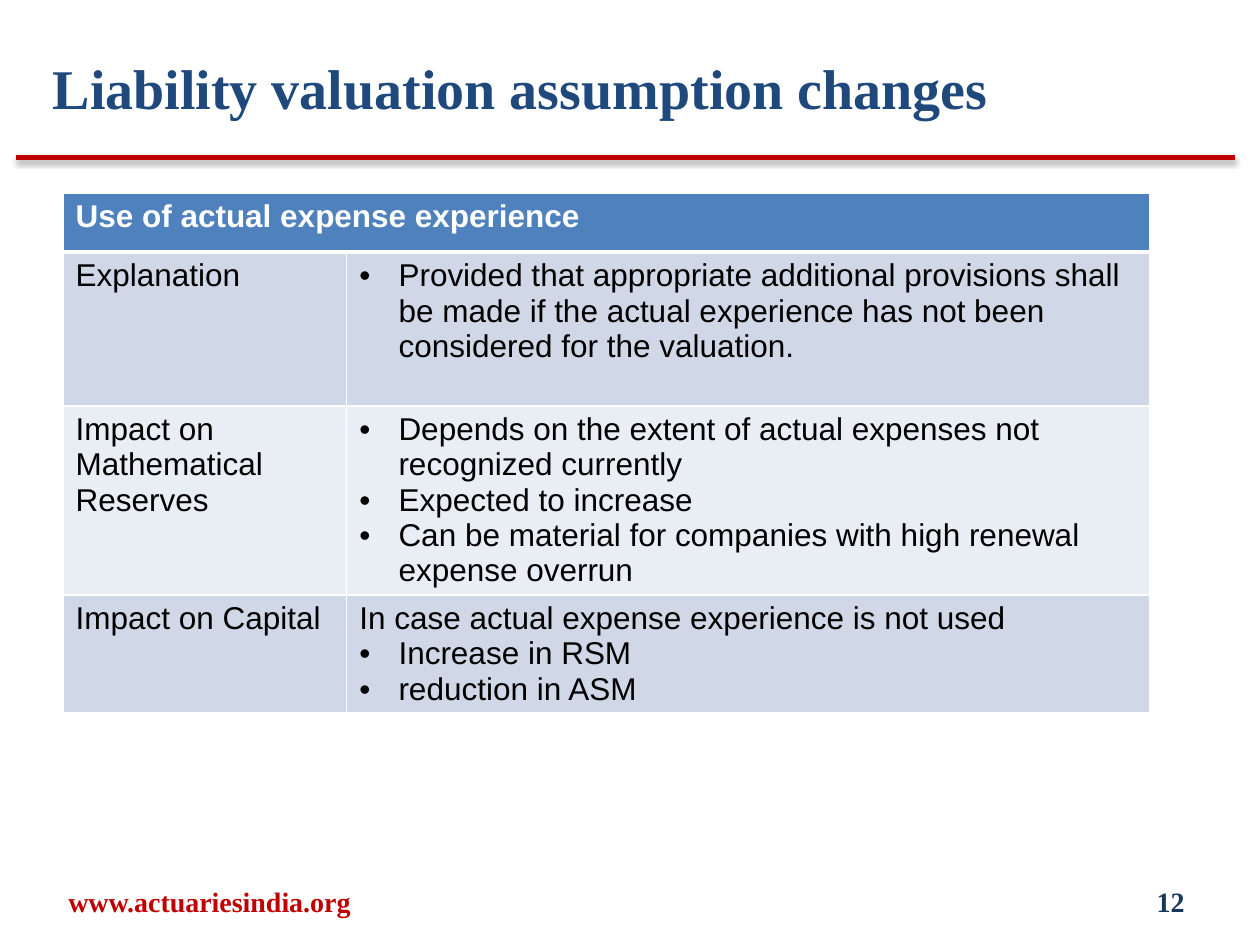
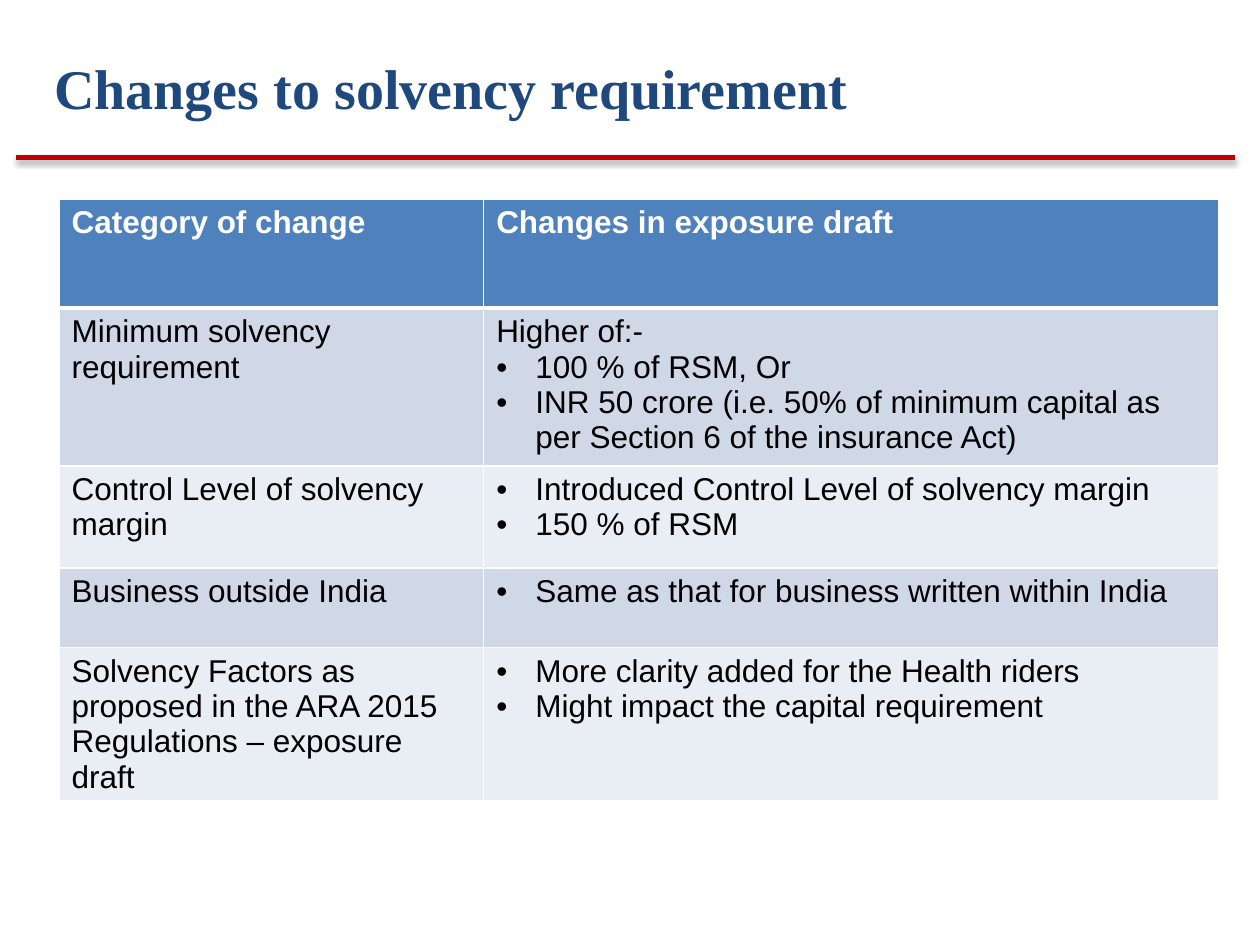
from lxml.etree import SubElement
from pptx import Presentation
from pptx.dml.color import RGBColor
from pptx.enum.text import MSO_ANCHOR, MSO_AUTO_SIZE, PP_ALIGN
from pptx.oxml import parse_xml
from pptx.oxml.ns import nsdecls, qn
from pptx.util import Cm, Pt

SERIF, SANS = "Times New Roman", "Arial"
NAVY, DEEP, RED = "1F497D", "17375E", "C00000"
WHITE, BLACK = "FFFFFF", "000000"
HEAD, BANDS = "4F81BD", ("E9EDF4", "D0D8E8")
HANG = Cm(0.79)


def rgb(value):
    return RGBColor.from_string(value)


def write(p, text, font=SANS, size=18, color=BLACK, bold=False, align=PP_ALIGN.LEFT, bullet=False):
    p.alignment = align
    if bullet:
        pPr = p._p.get_or_add_pPr()
        pPr.set("marL", str(HANG))
        pPr.set("indent", str(-HANG))
        SubElement(pPr, qn("a:buFont"), typeface=SANS)
        SubElement(pPr, qn("a:buChar"), char="•")
    r = p.add_run()
    r.text = text
    r.font.name, r.font.size, r.font.bold = font, Pt(size), bold
    r.font.color.rgb = rgb(color)


def add_rule(s, left, top, width):
    line = s.shapes.add_connector(1, Cm(left), Cm(top), Cm(left + width), Cm(top))
    line.line.color.rgb = rgb(RED)
    line.line.width = Pt(3)
    line._element.spPr.append(parse_xml(
        f'<a:effectLst {nsdecls("a")}>'
        f'<a:outerShdw blurRad="{Pt(3.1)}" dist="{Pt(1.6)}" dir="5400000" rotWithShape="0">'
        f'<a:srgbClr val="{BLACK}"><a:alpha val="38000"/></a:srgbClr>'
        '</a:outerShdw></a:effectLst>'))


def add_title(s, text, left, top, width, height):
    sp = s.shapes.title
    sp.left, sp.top, sp.width, sp.height = Cm(left), Cm(top), Cm(width), Cm(height)
    tf = sp.text_frame
    tf.word_wrap = True
    tf.auto_size = MSO_AUTO_SIZE.NONE
    tf.vertical_anchor = MSO_ANCHOR.TOP
    write(tf.paragraphs[0], text, font=SERIF, size=32, color=NAVY, bold=True)


def add_footer_text(s, text, left, width, color, align):
    tf = s.shapes.add_textbox(Cm(left), Cm(17.65), Cm(width), Cm(1.02)).text_frame
    tf.word_wrap = True
    tf.vertical_anchor = MSO_ANCHOR.MIDDLE
    write(tf.paragraphs[0], text, font=SERIF, size=16, color=color, bold=True, align=align)


def add_footer(s, site, number):
    add_footer_text(s, site, 0.2, 8.05, RED, PP_ALIGN.CENTER)
    add_footer_text(s, number, 18.21, 5.92, DEEP, PP_ALIGN.RIGHT)


def set_borders(cell, top=1, bottom=1):
    tcPr = cell._tc.get_or_add_tcPr()
    for i, (side, width) in enumerate((("L", 1), ("R", 1), ("T", top), ("B", bottom))):
        tcPr.insert(i, parse_xml(
            f'<a:ln{side} {nsdecls("a")} w="{Pt(width)}"><a:solidFill>'
            f'<a:srgbClr val="{WHITE}"/></a:solidFill></a:ln{side}>'))


def fill_cell(cell, content, row):
    head = row == 0
    cell.fill.solid()
    cell.fill.fore_color.rgb = rgb(HEAD if head else BANDS[row % 2])
    set_borders(cell, top=3 if row == 1 else 1, bottom=3 if head else 1)
    tf = cell.text_frame
    for i, line in enumerate(content.split("\n") if content else []):
        p = tf.add_paragraph() if i else tf.paragraphs[0]
        write(p, line.removeprefix("• "), color=WHITE if head else BLACK,
              bold=head, bullet=line.startswith("• "))


def add_grid(s, rows, left, top, widths, heights):
    tbl = s.shapes.add_table(len(rows), len(widths), Cm(left), Cm(top),
                             Cm(sum(widths)), Cm(sum(heights))).table
    for col, width in zip(tbl.columns, widths):
        col.width = Cm(width)
    for r, (row, height) in enumerate(zip(rows, heights)):
        tbl.rows[r].height = Cm(height)
        for c, content in enumerate(row):
            fill_cell(tbl.cell(r, c), content, r)
    if not rows[0][-1]:
        tbl.cell(0, 0).merge(tbl.cell(0, len(widths) - 1))


def add_table_slide(prs, title, title_box, rows, **grid):
    s = prs.slides.add_slide(prs.slide_layouts[5])
    add_rule(s, 0.33, 3.18, 24.56)
    add_title(s, title, *title_box)
    add_grid(s, rows, **grid)
    return s


EXPENSE_ROWS = [
    ("Use of actual expense experience", ""),
    ("Explanation",
     "• Provided that appropriate additional provisions shall be made if the actual "
     "experience has not been considered for the valuation."),
    ("Impact on Mathematical Reserves",
     "• Depends on the extent of actual expenses not recognized currently\n"
     "• Expected to increase\n"
     "• Can be material for companies with high renewal expense overrun"),
    ("Impact on Capital",
     "In case actual expense experience is not used\n• Increase in RSM\n• reduction in ASM"),
]

SOLVENCY_ROWS = [
    ("Category of change", "Changes in exposure draft"),
    ("Minimum solvency requirement",
     "Higher of:-\n• 100 % of RSM, Or\n"
     "• INR 50 crore (i.e. 50% of minimum capital as per Section 6 of the insurance Act)"),
    ("Control Level of solvency margin",
     "• Introduced Control Level of solvency margin\n• 150 % of RSM"),
    ("Business outside India", "• Same as that for business written within India"),
    ("Solvency Factors as proposed in the ARA 2015 Regulations – exposure draft",
     "• More clarity added for the Health riders\n• Might impact the capital requirement"),
]


def main():
    prs = Presentation()
    prs.slide_width, prs.slide_height = Cm(25.4), Cm(19.05)
    s = add_table_slide(prs, "Liability valuation assumption changes", (0.81, 0.95, 19.89, 1.7),
                        EXPENSE_ROWS, left=1.27, top=3.89, widths=(5.72, 16.18),
                        heights=(1.19, 3.1, 3.81, 2.36))
    add_footer(s, "www.actuariesindia.org", "12")
    add_table_slide(prs, "Changes to solvency requirement", (0.84, 0.95, 18.85, 1.7),
                    SOLVENCY_ROWS, left=1.19, top=4.01, widths=(8.56, 14.81),
                    heights=(2.2, 3.18, 2.06, 1.6, 3.07))
    prs.save("out.pptx")


if __name__ == "__main__":
    main()
